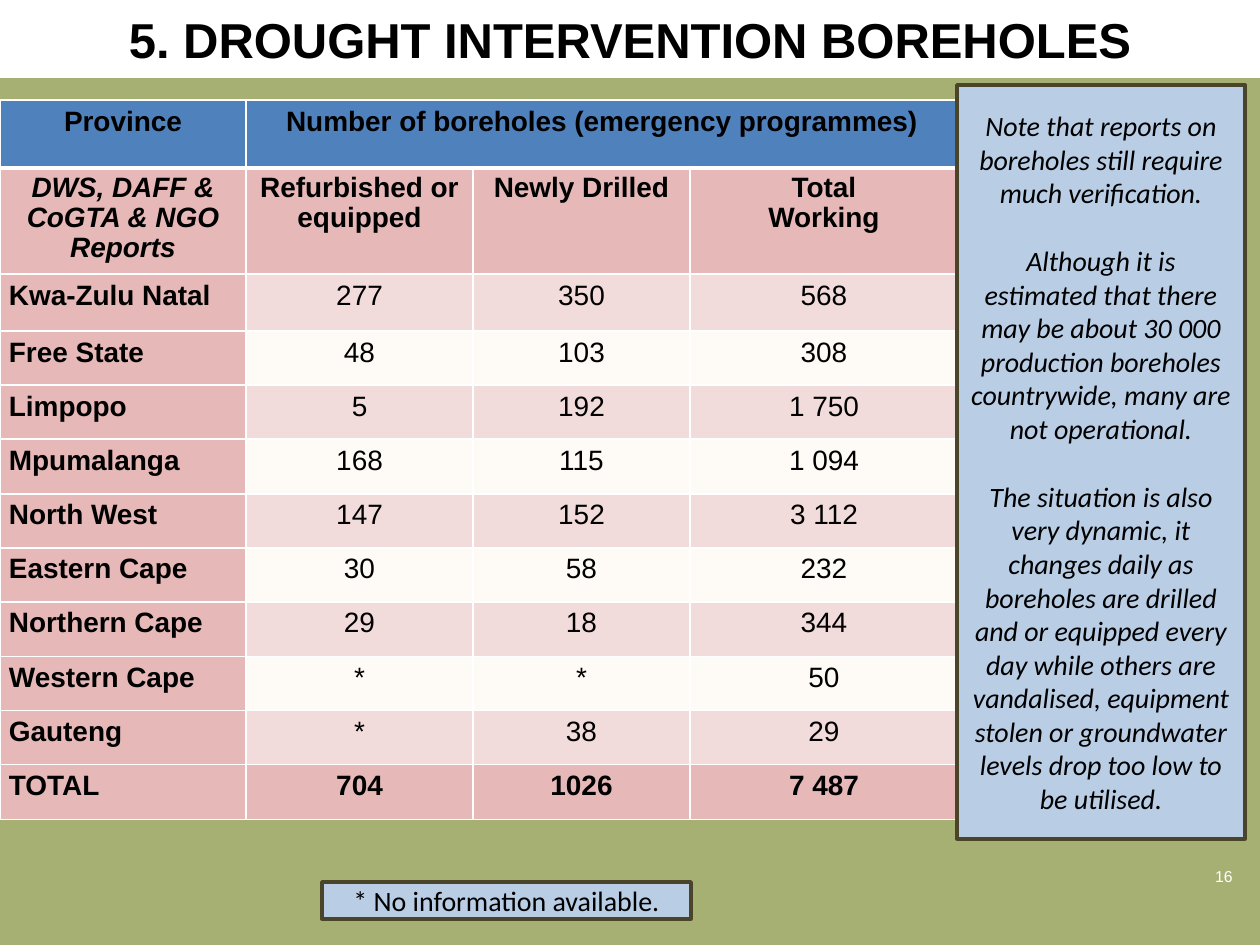
from dataclasses import dataclass
from typing import Optional

from lxml.etree import SubElement
from pptx import Presentation
from pptx.dml.color import RGBColor
from pptx.enum.shapes import MSO_SHAPE
from pptx.enum.text import MSO_ANCHOR, PP_ALIGN
from pptx.oxml.ns import qn
from pptx.util import Emu, Pt

PX = 914400 / 126
BLACK, WHITE = "000000", "FFFFFF"
SAGE, BLUE, PALE_BLUE, BROWN = "A7B073", "4F81BD", "B9CDE5", "4A452A"
ROSE, PALE_ROSE, CREAM = "E6B9B8", "F2DCDB", "FEFAF5"
EDGES = ("lnL", "lnR", "lnT", "lnB")

COLUMN_WIDTHS = (246, 227, 217, 268)
EVEN_ROWS_HEIGHT, EVEN_ROWS = 489, 9
ROW_HEIGHTS = [68, 106, 57] + [
    EVEN_ROWS_HEIGHT * (i + 1) // EVEN_ROWS - EVEN_ROWS_HEIGHT * i // EVEN_ROWS
    for i in range(EVEN_ROWS)
]
BOREHOLES = (
    ("Province", "Number of boreholes (emergency programmes)", "", ""),
    ("DWS, DAFF & CoGTA & NGO Reports", "Refurbished or equipped", "Newly Drilled", "Total\nWorking"),
    ("Kwa-Zulu Natal", "277", "350", "568"),
    ("Free State", "48", "103", "308"),
    ("Limpopo", "5", "192", "1 750"),
    ("Mpumalanga", "168", "115", "1 094"),
    ("North West", "147", "152", "3 112"),
    ("Eastern Cape", "30", "58", "232"),
    ("Northern Cape", "29", "18", "344"),
    ("Western Cape", "*", "*", "50"),
    ("Gauteng", "*", "38", "29"),
    ("TOTAL", "704", "1026", "7 487"),
)
TOTAL_ROW = len(BOREHOLES) - 1


@dataclass(frozen=True)
class Box:
    left: int
    top: int
    width: int
    height: int

    def emu(self) -> tuple:
        return tuple(px(n) for n in (self.left, self.top, self.width, self.height))


@dataclass(frozen=True)
class TextStyle:
    size: int = 16
    font: str = "Arial"
    color: str = BLACK
    bold: bool = False
    italic: bool = False
    align: PP_ALIGN = PP_ALIGN.CENTER
    line_spacing: Optional[float] = None
    gap: float = 0


@dataclass(frozen=True)
class Note:
    box: Box
    text: str
    style: TextStyle


NOTES = (
    Note(
        Box(957, 85, 288, 754),
        "Note that reports on boreholes still require much verification.\n"
        "Although it is estimated that there may be about 30 000 production boreholes "
        "countrywide, many are not operational.\n"
        "The situation is also very dynamic, it changes daily as boreholes are drilled "
        "and or equipped every day while others are vandalised, equipment stolen or "
        "groundwater levels drop too low to be utilised.",
        TextStyle(font="Calibri", italic=True, gap=19.5),
    ),
    Note(Box(322, 882, 369, 37), "* No information available.", TextStyle(font="Calibri")),
)


def px(length: int) -> Emu:
    return Emu(round(length * PX))


def rgb(color: str) -> RGBColor:
    return RGBColor.from_string(color)


def paint(target, color: str) -> None:
    target.fill.solid()
    target.fill.fore_color.rgb = rgb(color)


def write(frame, text: str, style: TextStyle) -> None:
    frame.text = text
    for index, paragraph in enumerate(frame.paragraphs):
        paragraph.alignment = style.align
        paragraph.space_before = Pt(style.gap if index else 0)
        if style.line_spacing:
            paragraph.line_spacing = style.line_spacing
        for run in paragraph.runs:
            run.font.size = Pt(style.size)
            run.font.name = style.font
            run.font.bold = style.bold
            run.font.italic = style.italic
            run.font.color.rgb = rgb(style.color)


def add_title(slide, box: Box, text: str) -> None:
    title = slide.shapes.title
    title.left, title.top, title.width, title.height = box.emu()
    paint(title, WHITE)
    title.text_frame.vertical_anchor = MSO_ANCHOR.MIDDLE
    write(title.text_frame, text, TextStyle(size=28, bold=True))


def add_note(slide, note: Note) -> None:
    panel = slide.shapes.add_shape(MSO_SHAPE.RECTANGLE, *note.box.emu())
    panel.shadow.inherit = False
    paint(panel, PALE_BLUE)
    panel.line.color.rgb = rgb(BROWN)
    panel.line.width = Pt(2)
    frame = panel.text_frame
    frame.word_wrap = True
    frame.vertical_anchor = MSO_ANCHOR.MIDDLE
    frame.margin_left = frame.margin_right = px(12)
    write(frame, note.text, note.style)


def add_page_number(slide, box: Box, text: str) -> None:
    frame = slide.shapes.add_textbox(*box.emu()).text_frame
    frame.word_wrap = True
    frame.vertical_anchor = MSO_ANCHOR.MIDDLE
    write(frame, text, TextStyle(size=9, color=WHITE, align=PP_ALIGN.RIGHT))


def set_borders(cell, bottom: int) -> None:
    properties = cell._tc.get_or_add_tcPr()
    for index, edge in enumerate(EDGES):
        line = SubElement(properties, qn(f"a:{edge}"), w=str(Pt(bottom if edge == "lnB" else 1)))
        SubElement(SubElement(line, qn("a:solidFill")), qn("a:srgbClr"), val=WHITE)
        properties.insert(index, line)


def cell_color(row: int, column: int) -> str:
    if row == 0:
        return BLUE
    if row in (1, TOTAL_ROW) or column == 0:
        return ROSE
    return CREAM if row % 2 else PALE_ROSE


def cell_style(row: int, column: int) -> TextStyle:
    return TextStyle(
        bold=row in (0, 1, TOTAL_ROW) or column == 0,
        italic=(row, column) == (1, 0),
        align=PP_ALIGN.LEFT if row > 1 and column == 0 else PP_ALIGN.CENTER,
        line_spacing=0.96 if row == 1 else None,
    )


def add_borehole_table(slide, left: int, top: int) -> None:
    box = Box(left, top, sum(COLUMN_WIDTHS), sum(ROW_HEIGHTS))
    table = slide.shapes.add_table(len(BOREHOLES), len(COLUMN_WIDTHS), *box.emu()).table
    table.first_row = table.horz_banding = False
    for column, width in zip(table.columns, COLUMN_WIDTHS):
        column.width = px(width)
    for row, height in zip(table.rows, ROW_HEIGHTS):
        row.height = px(height)
    for row, values in enumerate(BOREHOLES):
        for column, value in enumerate(values):
            cell = table.cell(row, column)
            cell.margin_left = cell.margin_right = px(9)
            cell.margin_top = cell.margin_bottom = px(6)
            paint(cell, cell_color(row, column))
            set_borders(cell, bottom=1 if row else 3)
            write(cell.text_frame, value, cell_style(row, column))
    table.cell(0, 1).merge(table.cell(0, 3))


def main() -> None:
    presentation = Presentation()
    presentation.slide_width, presentation.slide_height = px(1260), px(945)
    slide = presentation.slides.add_slide(presentation.slide_layouts[5])
    paint(slide.background, SAGE)
    add_title(slide, Box(0, 0, 1260, 78), "5. DROUGHT INTERVENTION BOREHOLES")
    add_borehole_table(slide, 0, 100)
    add_page_number(slide, Box(845, 851, 400, 50), "16")
    for note in NOTES:
        add_note(slide, note)
    presentation.save("out.pptx")


if __name__ == "__main__":
    main()
